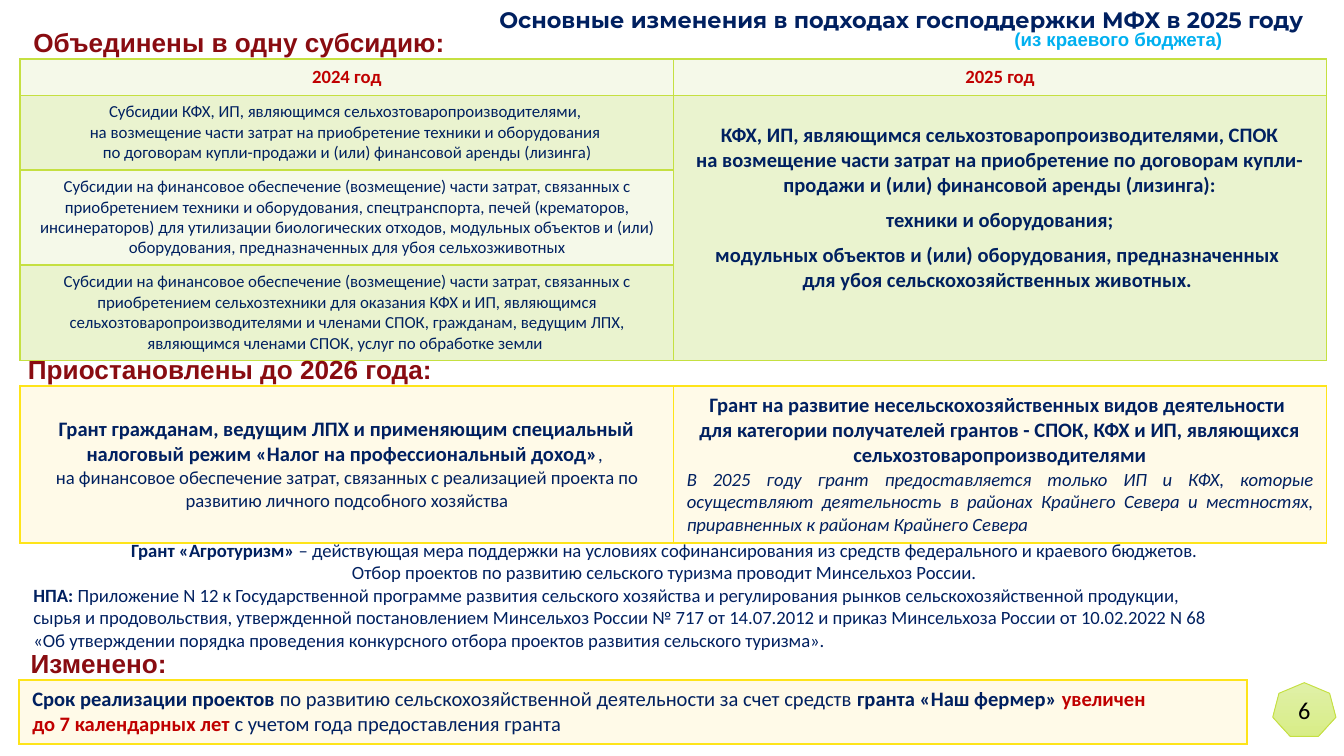
"""Build the slide on 2025 changes in state support for small farms."""
from dataclasses import dataclass
from typing import Optional

from lxml import etree
from pptx import Presentation
from pptx.dml.color import RGBColor
from pptx.enum.shapes import MSO_SHAPE
from pptx.enum.text import MSO_ANCHOR, PP_ALIGN
from pptx.oxml.ns import qn
from pptx.util import Inches, Pt

LEFT, CENTER, RIGHT, JUSTIFY = PP_ALIGN.LEFT, PP_ALIGN.CENTER, PP_ALIGN.RIGHT, PP_ALIGN.JUSTIFY
TOP, MIDDLE = MSO_ANCHOR.TOP, MSO_ANCHOR.MIDDLE
HEPTAGON = MSO_SHAPE.HEPTAGON

NAVY, RED, MAROON, SKY, BLACK = "002060", "C00000", "890C11", "00B0F0", "000000"
LIME, PALE_LIME, SOFT_LIME = "C5E041", "F5F9E9", "EAF3CF"
YELLOW, CREAM = "FEE419", "FFFAE8"


@dataclass
class Span:
    text: str
    bold: Optional[bool] = None
    color: Optional[str] = None
    size: Optional[float] = None


@dataclass
class Para:
    spans: list[Span]
    size: float
    bold: bool = False
    color: str = NAVY
    font: str = "Calibri"
    align: PP_ALIGN = CENTER
    italic: bool = False
    before: float = 0


@dataclass
class Label:
    left: float
    top: float
    width: float
    height: float
    paras: list[Para]
    wrap: bool = True


@dataclass
class Cell:
    row: int
    column: int
    paras: list[Para]
    fill: str
    anchor: MSO_ANCHOR = MIDDLE
    rows: int = 1
    bottom: float = 0.05


@dataclass
class Grid:
    left: float
    top: float
    height: float
    columns: list[float]
    rows: list[float]
    border: str
    cells: list[Cell]


def rgb(value: str) -> RGBColor:
    """Turn a hex string into a colour."""
    return RGBColor.from_string(value)


def plain(text: str, size: float, **style) -> Para:
    """Make a paragraph with one span."""
    return Para([Span(text)], size, **style)


def heading(left: float, top: float, height: float, text: str) -> Label:
    """Make a section heading."""
    para = plain(text, 14, bold=True, color=MAROON, font="Arial", align=LEFT)
    return Label(left, top, 9.14, height, [para])


def write(frame, paras: list[Para]) -> None:
    """Fill a text frame with paragraphs."""
    for index, para in enumerate(paras):
        paragraph = frame.add_paragraph() if index else frame.paragraphs[0]
        paragraph.alignment = para.align
        if para.before:
            paragraph.space_before = Pt(para.before)
        font = paragraph.font
        font.name, font.size = para.font, Pt(para.size)
        font.bold, font.italic = para.bold, para.italic
        font.color.rgb = rgb(para.color)
        for span in para.spans:
            for number, line in enumerate(span.text.split("\n")):
                if number:
                    paragraph.add_line_break()
                run = paragraph.add_run()
                run.text = line
                if span.bold is not None:
                    run.font.bold = span.bold
                if span.size:
                    run.font.size = Pt(span.size)
                if span.color:
                    run.font.color.rgb = rgb(span.color)


def add_label(page, label: Label) -> None:
    """Draw a text box."""
    box = page.shapes.add_textbox(*map(Inches, (label.left, label.top, label.width, label.height)))
    box.text_frame.word_wrap = label.wrap
    write(box.text_frame, label.paras)


def outline(cell, color: str) -> None:
    """Put a one-point border on every side of a table cell."""
    properties = cell._tc.get_or_add_tcPr()
    for side in ("lnL", "lnR", "lnT", "lnB"):
        line = etree.SubElement(properties, qn(f"a:{side}"), w=str(Pt(1)))
        solid = etree.SubElement(line, qn("a:solidFill"))
        etree.SubElement(solid, qn("a:srgbClr"), val=color)


def add_grid(page, grid: Grid) -> None:
    """Draw a bordered table."""
    frame = page.shapes.add_table(
        len(grid.rows), len(grid.columns), Inches(grid.left), Inches(grid.top),
        Inches(sum(grid.columns)), Inches(grid.height))
    table = frame.table
    table.first_row = table.horz_banding = False
    for column, width in zip(table.columns, grid.columns):
        column.width = Inches(width)
    for row, height in zip(table.rows, grid.rows):
        row.height = Inches(height)
    frame.height = Inches(grid.height)
    for cell in table.iter_cells():
        outline(cell, grid.border)
    for item in grid.cells:
        cell = table.cell(item.row, item.column)
        if item.rows > 1:
            cell.merge(table.cell(item.row + item.rows - 1, item.column))
        cell.fill.solid()
        cell.fill.fore_color.rgb = rgb(item.fill)
        cell.vertical_anchor = item.anchor
        cell.margin_bottom = Inches(item.bottom)
        write(cell.text_frame, item.paras)


def add_page_number(page, number: str) -> None:
    """Draw the page number in a heptagon."""
    badge = page.shapes.add_shape(HEPTAGON, *map(Inches, (9.47, 5.08, 0.47, 0.4)))
    badge.shadow.inherit = False
    badge.fill.gradient()
    badge.fill.gradient_angle = 270
    for stop, color in zip(badge.fill.gradient_stops, ("E0F0A8", "D8ED87")):
        stop.color.rgb = rgb(color)
    badge.line.color.rgb = rgb(LIME)
    badge.line.width = Pt(0.5)
    frame = badge.text_frame
    frame.margin_left = frame.margin_right = frame.margin_top = frame.margin_bottom = 0
    frame.vertical_anchor = MIDDLE
    write(frame, [plain(number, 13, color=BLACK)])


YEARS = ["2024 год", "2025 год"]
OLD_SUBSIDIES = [
    "Субсидии КФХ, ИП, являющимся сельхозтоваропроизводителями, \nна возмещение части затрат на приобретение техники и оборудования \nпо договорам купли-продажи и (или) финансовой аренды (лизинга)",
    "Субсидии на финансовое обеспечение (возмещение) части затрат, связанных с приобретением техники и оборудования, спецтранспорта, печей (крематоров, инсинераторов) для утилизации биологических отходов, модульных объектов и (или) оборудования, предназначенных для убоя сельхозживотных",
    "Субсидии на финансовое обеспечение (возмещение) части затрат, связанных с приобретением сельхозтехники для оказания КФХ и ИП, являющимся сельхозтоваропроизводителями и членами СПОК, гражданам, ведущим ЛПХ, являющимся членами СПОК, услуг по обработке земли ",
]
NEW_SUBSIDY = [
    plain("КФХ, ИП, являющимся сельхозтоваропроизводителями, СПОК\nна возмещение части затрат на приобретение по договорам купли-продажи и (или) финансовой аренды (лизинга):", 11, bold=True),
    plain("техники и оборудования;", 11, bold=True, before=5),
    plain("модульных объектов и (или) оборудования, предназначенных \nдля убоя сельскохозяйственных животных. ", 11, bold=True, before=5),
]
CITIZEN_GRANT = [Para([
    Span("Грант гражданам, ведущим ЛПХ и применяющим специальный налоговый режим «Налог на профессиональный доход»", bold=True),
    Span(", \nна финансовое обеспечение затрат, связанных с реализацией проекта по развитию личного подсобного хозяйства", size=10)], 11)]
RURAL_GRANT = [
    plain("Грант на развитие несельскохозяйственных видов деятельности \nдля категории получателей грантов - СПОК, КФХ и ИП, являющихся сельхозтоваропроизводителями", 11, bold=True),
    plain("В 2025 году грант предоставляется только ИП и КФХ, которые осуществляют деятельность в районах Крайнего Севера и местностях, приравненных к районам Крайнего Севера", 10, italic=True, align=JUSTIFY),
]
TOURISM = [
    Para([Span("Грант «Агротуризм» ", bold=True), Span("– действующая мера поддержки на условиях софинансирования из средств федерального и краевого бюджетов. ")], 10),
    plain("Отбор проектов по развитию сельского туризма проводит Минсельхоз России. ", 10),
    Para([Span("НПА: ", bold=True), Span("Приложение N 12 к Государственной программе развития сельского хозяйства и регулирования рынков сельскохозяйственной продукции,")], 10, align=LEFT),
    plain("сырья и продовольствия, утвержденной постановлением Минсельхоз России № 717 от 14.07.2012 и приказ Минсельхоза России от 10.02.2022 N 68 \n«Об утверждении порядка проведения конкурсного отбора проектов развития сельского туризма».", 10, align=LEFT),
]
TERM = [Para([
    Span("Срок реализации проектов ", bold=True),
    Span("по развитию сельскохозяйственной деятельности за счет средств "),
    Span("гранта «Наш фермер» ", bold=True),
    Span("увеличен \nдо 7 календарных лет ", bold=True, color=RED),
    Span("с учетом года предоставления гранта")], 11, align=LEFT)]

LABELS = [
    Label(3.28, 0, 6.52, 0.3, [plain("Основные изменения в подходах господдержки МФХ в 2025 году", 12, bold=True, font="Montserrat", align=RIGHT)]),
    heading(0.15, 0.15, 0.56, "Объединены в одну субсидию:"),
    heading(0.11, 2.58, 0.34, "Приостановлены до 2026 года:"),
    Label(0.15, 3.96, 9.61, 1.11, TOURISM),
    heading(0.13, 4.77, 0.34, "Изменено:"),
    Label(7.45, 0.16, 1.77, 0.27, [plain("(из краевого бюджета)", 10, bold=True, color=SKY, font="Arial", align=LEFT)], wrap=False),
]
SUBSIDY_CELLS = [
    *(Cell(0, column, [plain(year, 10, bold=True, color=RED)], PALE_LIME, TOP) for column, year in enumerate(YEARS)),
    *(Cell(row, 0, [plain(text, 9)], SOFT_LIME if row % 2 else PALE_LIME, TOP) for row, text in enumerate(OLD_SUBSIDIES, 1)),
    Cell(1, 1, NEW_SUBSIDY, SOFT_LIME, rows=3, bottom=0.35),
]
GRIDS = [
    Grid(0.15, 0.44, 2.22, [4.86, 4.86], [0.26, 0.51, 0.64, 0.64], LIME, SUBSIDY_CELLS),
    Grid(0.15, 2.87, 1.15, [4.86, 4.86], [0.41], YELLOW, [Cell(0, 0, CITIZEN_GRANT, CREAM), Cell(0, 1, RURAL_GRANT, CREAM)]),
    Grid(0.14, 5.06, 0.47, [9.14], [0.41], YELLOW, [Cell(0, 0, TERM, CREAM)]),
]


def main() -> None:
    """Build and save the deck."""
    deck = Presentation()
    deck.slide_width = Inches(10)
    deck.slide_height = deck.slide_width * 9 // 16
    page = deck.slides.add_slide(deck.slide_layouts[6])
    for grid in GRIDS:
        add_grid(page, grid)
    for label in LABELS:
        add_label(page, label)
    add_page_number(page, "6")
    deck.save("out.pptx")


if __name__ == "__main__":
    main()
